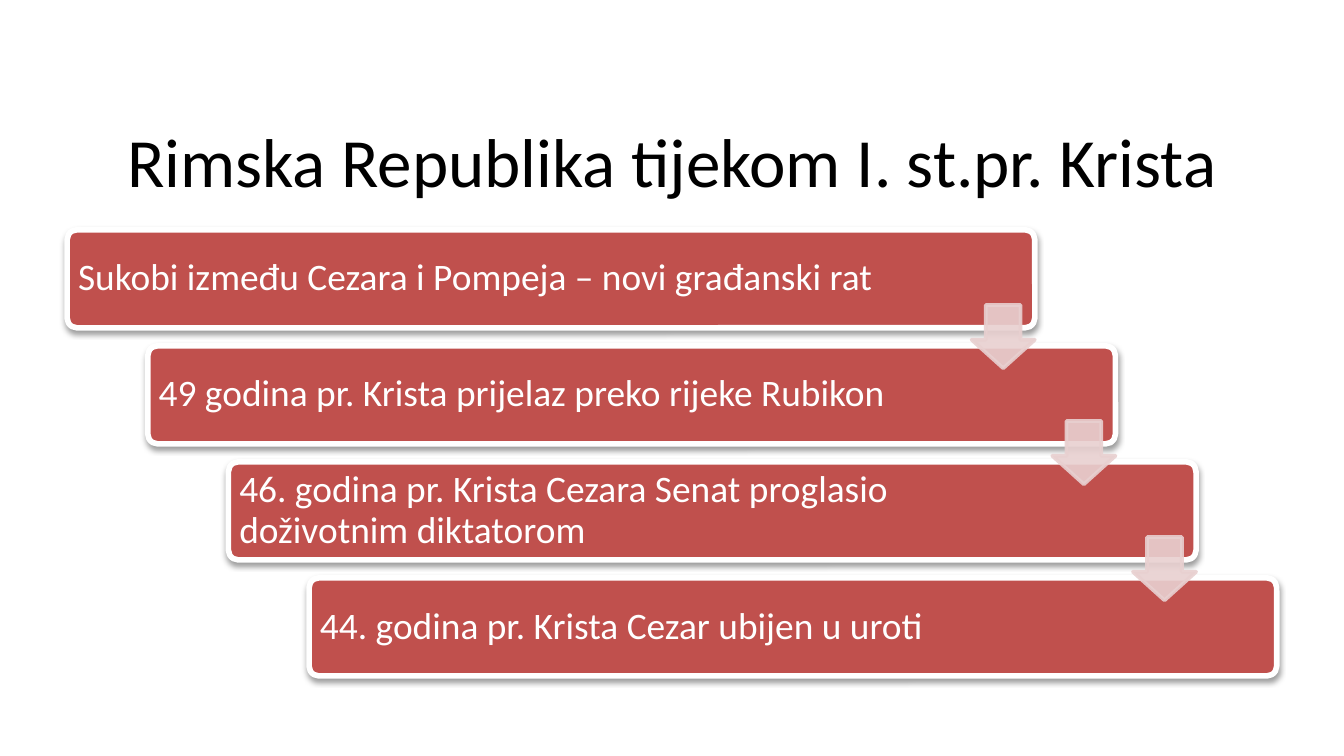
"""Build a slide with a descending staircase of events in the late Roman Republic."""
from lxml import etree
from pptx import Presentation, util as u
from pptx.dml.color import RGBColor
from pptx.enum import shapes, text
from pptx.oxml import parse_xml
from pptx.oxml.ns import nsdecls, qn

TITLE = "Rimska Republika tijekom I. st.pr. Krista"
EVENTS = [
    "Sukobi između Cezara i Pompeja – novi građanski rat",
    "49 godina pr. Krista prijelaz preko rijeke Rubikon",
    "46. godina pr. Krista Cezara Senat proglasio doživotnim diktatorom",
    "44. godina pr. Krista Cezar ubijen u uroti",
]
COLORS = {"title": "000000", "step": "C0504D", "light": "FFFFFF", "arrow": "E8D0D0"}
FONT = "Calibri"
WIDTH = 10
HEIGHT = WIDTH * 9 / 16
MARGIN = 0.05 * WIDTH
FIRST_TOP, LAST_TOP = 1.71, 4.3
STEP_W, STEP_H = 0.72 * WIDTH, 0.73
SHIFT_X = (WIDTH - 2 * MARGIN - STEP_W) / (len(EVENTS) - 1)
SHIFT_Y = (LAST_TOP - FIRST_TOP) / (len(EVENTS) - 1)
ARROW = 0.47
ARROW_DROP = 0.56
SHADOW = (
    f'<a:effectLst {nsdecls("a")}><a:outerShdw blurRad="{u.Pt(3.1)}" dist="{u.Pt(1.6)}" '
    'dir="5400000" rotWithShape="0"><a:srgbClr val="000000"><a:alpha val="38000"/>'
    "</a:srgbClr></a:outerShdw></a:effectLst>"
)


def color(name):
    return RGBColor.from_string(COLORS[name])


def write(frame, words, size, ink, align):
    frame.word_wrap = True
    frame.vertical_anchor = text.MSO_ANCHOR.MIDDLE
    para = frame.paragraphs[0]
    para.alignment = align
    para.line_spacing = 0.9
    span = para.add_run()
    span.text = words
    span.font.name = FONT
    span.font.size = u.Pt(size)
    span.font.color.rgb = color(ink)


def add_block(page, kind, place, adjustments, fill, line, weight):
    block = page.shapes.add_shape(kind, *map(u.Inches, place))
    for index, value in enumerate(adjustments):
        block.adjustments[index] = value
    block.shadow.inherit = False
    block.fill.solid()
    block.fill.fore_color.rgb = color(fill)
    block.line.color.rgb = color(line)
    block.line.width = u.Pt(weight)
    return block


def add_step(page, row, words):
    place = (MARGIN + row * SHIFT_X, FIRST_TOP + row * SHIFT_Y, STEP_W, STEP_H)
    step = add_block(page, shapes.MSO_SHAPE.ROUNDED_RECTANGLE, place, [0.1], "step", "light", 3)
    properties = step._element.spPr
    properties.replace(properties.find(qn("a:effectLst")), parse_xml(SHADOW))
    frame = step.text_frame
    frame.margin_left, frame.margin_right = u.Inches(0.06), u.Inches(1.05)
    frame.margin_top = frame.margin_bottom = u.Inches(0.06)
    write(frame, words, 20, "light", text.PP_ALIGN.LEFT)


def add_arrow(page, row):
    right = MARGIN + row * SHIFT_X + STEP_W
    place = (right - ARROW, FIRST_TOP + row * SHIFT_Y + ARROW_DROP, ARROW, ARROW)
    arrow = add_block(page, shapes.MSO_SHAPE.DOWN_ARROW, place, [0.55, 0.45], "arrow", "arrow", 2)
    for tint in arrow._element.spPr.iter(qn("a:srgbClr")):
        etree.SubElement(tint, qn("a:alpha")).set("val", "90000")


def main():
    deck = Presentation()
    deck.slide_width, deck.slide_height = u.Inches(WIDTH), u.Inches(HEIGHT)
    page = deck.slides.add_slide(deck.slide_layouts[5])
    title = page.shapes.title
    title.left, title.top = u.Inches(MARGIN), u.Inches(0.84)
    title.width, title.height = u.Inches(WIDTH - 2 * MARGIN), u.Inches(0.78)
    write(title.text_frame, TITLE, 37, "title", text.PP_ALIGN.CENTER)
    for row, words in enumerate(EVENTS):
        add_step(page, row, words)
    for row in range(len(EVENTS) - 1):
        add_arrow(page, row)
    deck.save("out.pptx")


if __name__ == "__main__":
    main()
